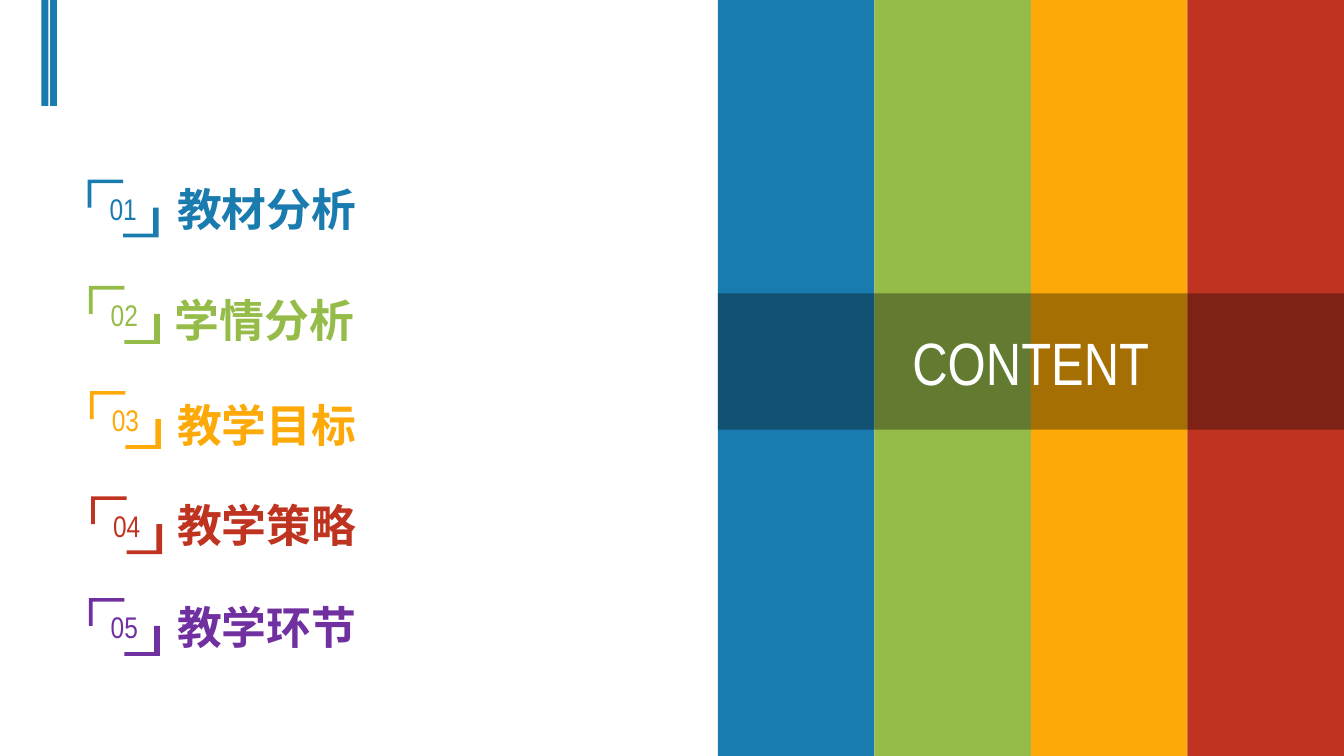
"""Build a contents slide with five numbered topics beside a striped panel."""
import pptx
import pptx.dml.color
import pptx.enum.shapes
import pptx.enum.text
import pptx.oxml.ns
import pptx.util
from lxml import etree

Pt = pptx.util.Pt
theme = {
    "blue": "1A7BAE", "green": "95BC49", "amber": "FDA907", "red": "BF3420",
    "purple": "7030A0", "black": "000000", "white": "FFFFFF",
    "body": "Arial", "narrow": "Arial Narrow",
    "topic": 24, "number": 16, "title": 32,
}


def paint(shape, color):
    shape.shadow.inherit = False
    shape.fill.solid()
    shape.fill.fore_color.rgb = pptx.dml.color.RGBColor.from_string(theme[color])
    shape.line.fill.background()


def write(shape, text, size, face, color, center=True):
    frame = shape.text_frame
    frame.word_wrap = True
    frame.text = text
    para = frame.paragraphs[0]
    if center:
        frame.vertical_anchor = pptx.enum.text.MSO_ANCHOR.MIDDLE
        para.alignment = pptx.enum.text.PP_ALIGN.CENTER
    font = para.runs[0].font
    font.size = Pt(theme[size])
    font.name = theme[face]
    font.bold = not center
    font.color.rgb = pptx.dml.color.RGBColor.from_string(theme[color])


deck = pptx.Presentation()
deck.slide_width, deck.slide_height = Pt(720), Pt(405)
slide = deck.slides.add_slide(deck.slide_layouts[6])
shapes = slide.shapes
rect = pptx.enum.shapes.MSO_SHAPE.RECTANGLE

for left in (22.2, 26.8):
    bar = shapes.add_shape(rect, Pt(left), Pt(0), Pt(3.7), Pt(56.8))
    paint(bar, "blue")

topics = [
    ("教材分析", "blue", 47, 96.2, 87.8, 93.6),
    ("学情分析", "green", 47.6, 153.2, 86.6, 153.4),
    ("教学目标", "amber", 48.2, 209.5, 87.8, 209.5),
    ("教学策略", "red", 48.8, 265.9, 87.8, 263),
    ("教学环节", "purple", 47.6, 320.4, 87.8, 317.6),
]
wide, high = 37.6, 30.8
corner = [(0, 0), (18.8, 0), (18.8, 1.8), (2.2, 1.8), (2.2, 15.4), (0, 15.4)]
turned = [(wide - x, high - y) for x, y in corner]
for index, (topic, color, left, top, text_x, text_y) in enumerate(topics, 1):
    pen = shapes.build_freeform(*corner[0], scale=Pt(1))
    pen.add_line_segments(corner[1:], close=True)
    pen.move_to(*turned[0])
    pen.add_line_segments(turned[1:], close=True)
    frame = pen.convert_to_shape(Pt(left), Pt(top))
    paint(frame, color)
    write(frame, f"{index:02}", "number", "narrow", color)
    label = shapes.add_textbox(Pt(text_x), Pt(text_y), Pt(286.6), Pt(36))
    write(label, topic, "topic", "body", color, center=False)

start = 384.6
width = (720 - start) / 4
for index, color in enumerate(("blue", "green", "amber", "red")):
    stripe = shapes.add_shape(rect, Pt(start + index * width), Pt(0), Pt(width), Pt(405))
    paint(stripe, color)

band = shapes.add_shape(rect, Pt(start), Pt(157.2), Pt(720 - start), Pt(73))
paint(band, "black")
tint = band.fill._xPr.find(".//" + pptx.oxml.ns.qn("a:srgbClr"))
etree.SubElement(tint, pptx.oxml.ns.qn("a:alpha"), val="34000")
write(band, "CONTENT", "title", "narrow", "white")

deck.save("out.pptx")
